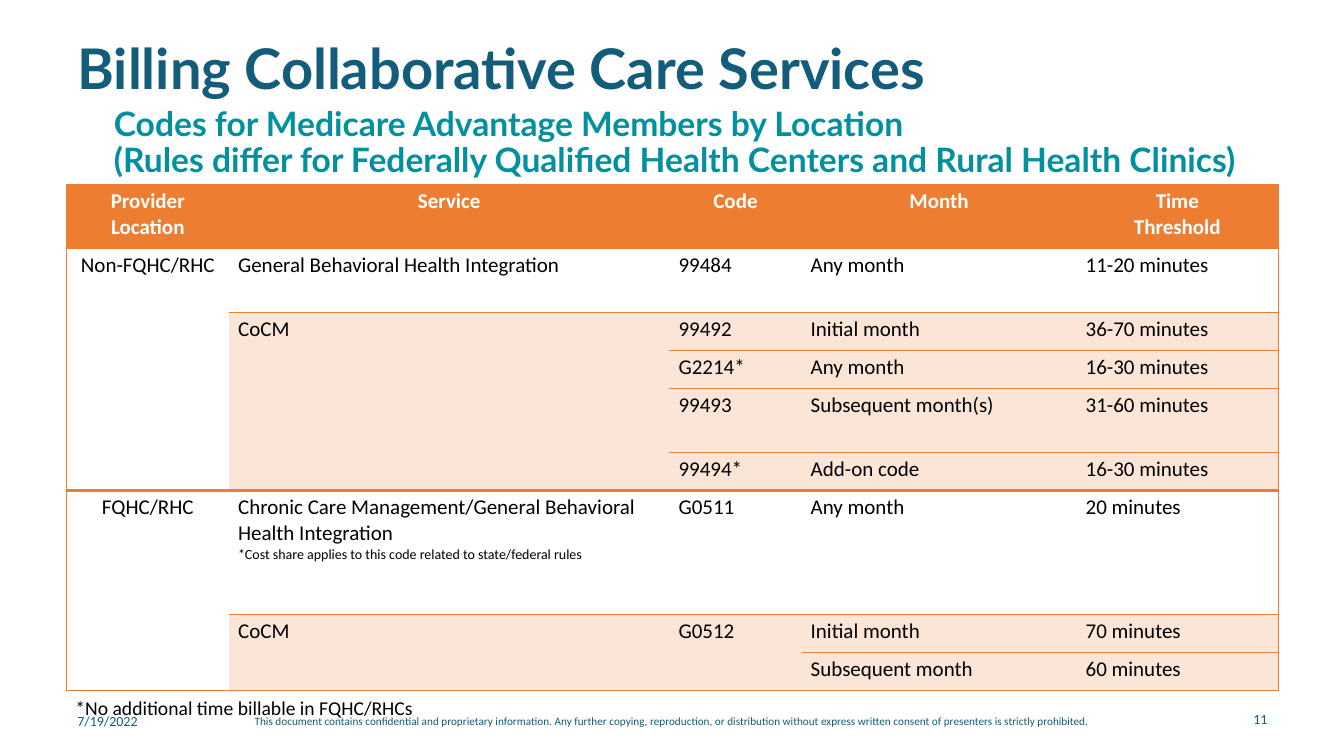
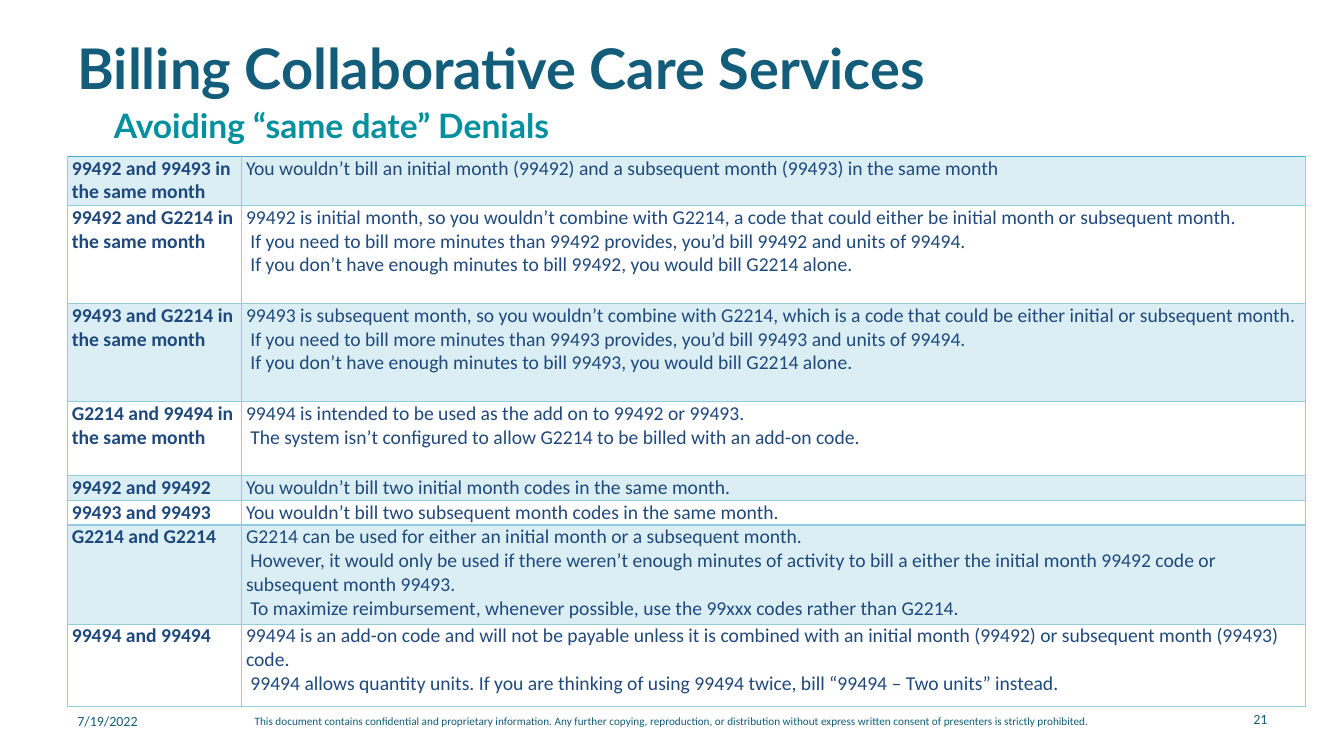
"""Build two slides on billing collaborative care services."""
from lxml.etree import SubElement
from pptx import Presentation
from pptx.dml.color import RGBColor
from pptx.enum.text import MSO_ANCHOR, MSO_AUTO_SIZE, PP_ALIGN
from pptx.oxml.ns import qn
from pptx.util import Cm, Pt

NAVY = RGBColor(0x13, 0x5D, 0x7A)
TEAL = RGBColor(0x00, 0x90, 0x9E)
ORANGE = RGBColor(0xED, 0x7D, 0x31)
PEACH = RGBColor(0xFB, 0xE5, 0xD6)
INK_BLUE = RGBColor(0x1F, 0x49, 0x7D)
SKY = RGBColor(0x92, 0xCD, 0xDC)
DEEP_SKY = RGBColor(0x4B, 0xAC, 0xC6)
PALE_SKY = RGBColor(0xDA, 0xEE, 0xF3)
BLACK = RGBColor(0, 0, 0)
WHITE = RGBColor(255, 255, 255)

TITLE = "Billing Collaborative Care Services"
DATE = "7/19/2022"
NOTICE = (
    "This document contains confidential and proprietary information. Any further copying, "
    "reproduction, or distribution without express written consent of presenters is strictly prohibited."
)


def write(frame, text, size=10, color=NAVY, font="Calibri", bold=False,
          align=PP_ALIGN.LEFT, anchor=MSO_ANCHOR.TOP, spacing=None, indent=0):
    """Fill a text frame with one paragraph per line of text."""
    frame.word_wrap = True
    frame.vertical_anchor = anchor
    lines = [text] if isinstance(text, str) else text
    for number, line in enumerate(lines):
        para = frame.add_paragraph() if number else frame.paragraphs[0]
        para.alignment = align
        para.line_spacing = spacing
        if number and indent:
            para._p.get_or_add_pPr().set("indent", str(indent))
        span = para.add_run()
        span.text = line
        span.font.name = font
        span.font.size = Pt(size)
        span.font.bold = bold
        span.font.color.rgb = color


def format_cell(cell, fill, edges, margin_x, margin_y):
    """Set borders, given as side to (colour, points), then fill and margins."""
    properties = cell._tc.get_or_add_tcPr()
    for side in "LRTB":
        line = SubElement(properties, qn(f"a:ln{side}"))
        if side in edges:
            color, width = edges[side]
            line.set("w", str(Pt(width)))
            SubElement(SubElement(line, qn("a:solidFill")), qn("a:srgbClr")).set("val", str(color))
        else:
            SubElement(line, qn("a:noFill"))
    cell.fill.solid()
    cell.fill.fore_color.rgb = fill
    cell.margin_left = cell.margin_right = margin_x
    cell.margin_top = cell.margin_bottom = margin_y


CODE_ROWS = [
    [["Provider", "Location"], "Service", "Code", "Month", ["Time", "Threshold"]],
    ["Non-FQHC/RHC", "General Behavioral Health Integration", "99484", "Any month", "11-20 minutes"],
    ["", "CoCM", "99492", "Initial month", "36-70 minutes"],
    ["", "", "G2214*", "Any month", "16-30 minutes"],
    ["", "", "99493", "Subsequent month(s)", "31-60 minutes"],
    ["", "", "99494*", "Add-on code", "16-30 minutes"],
    ["FQHC/RHC",
     ["Chronic Care Management/General Behavioral Health Integration",
      "*Cost share applies to this code related to state/federal rules"],
     "G0511", "Any month", "20 minutes"],
    ["", "CoCM", "G0512", "Initial month", "70 minutes"],
    ["", "", "", "Subsequent month", "60 minutes"],
]
CODE_MERGES = [(1, 0, 5), (2, 1, 5), (6, 0, 8), (7, 1, 8), (7, 2, 8)]
CODE_WIDTHS = [4.09, 11.1, 3.33, 6.93, 5.08]
CODE_HEIGHTS = [1.61, 1.61, 0.96, 0.96, 1.61, 0.96, 3.12, 0.96, 0.96]
WHITE_ROWS = (1, 6)
GROUP_END = 5

DENIAL_ROWS = [
    ("99492 and 99493 in the same month",
     ["You wouldn’t bill an initial month (99492) and a subsequent month (99493) in the same month"]),
    ("99492 and G2214 in the same month",
     ["99492 is initial month, so you wouldn’t combine with G2214, a code that could either be "
      "initial month or subsequent month.",
      "If you need to bill more minutes than 99492 provides, you’d bill 99492 and units of 99494.",
      "If you don’t have enough minutes to bill 99492, you would bill G2214 alone."]),
    ("99493 and G2214 in the same month",
     ["99493 is subsequent month, so you wouldn’t combine with G2214, which is a code that could be "
      "either initial or subsequent month.",
      "If you need to bill more minutes than 99493 provides, you’d bill 99493 and units of 99494.",
      "If you don’t have enough minutes to bill 99493, you would bill G2214 alone."]),
    ("G2214 and 99494 in the same month",
     ["99494 is intended to be used as the add on to 99492 or 99493.",
      "The system isn’t configured to allow G2214 to be billed with an add-on code."]),
    ("99492 and 99492", ["You wouldn’t bill two initial month codes in the same month."]),
    ("99493 and 99493", ["You wouldn’t bill two subsequent month codes in the same month."]),
    ("G2214 and G2214",
     ["G2214 can be used for either an initial month or a subsequent month.",
      "However, it would only be used if there weren’t enough minutes of activity to bill a either "
      "the initial month 99492 code or subsequent month 99493.",
      "To maximize reimbursement, whenever possible, use the 99xxx codes rather than G2214."]),
    ("99494 and 99494",
     ["99494 is an add-on code and will not be payable unless it is combined with an initial month "
      "(99492) or subsequent month (99493) code.",
      "99494 allows quantity units. If you are thinking of using 99494 twice, bill “99494 – Two "
      "units” instead."]),
]
DENIAL_WIDTHS = [4.39, 26.8]
DENIAL_HEIGHTS = [1.24, 2.47, 2.47, 1.87, 0.62, 0.62, 2.5, 2.07]

PAGES = [
    ("11", 2.36, ["Codes for Medicare Advantage Members by Location",
                  "(Rules differ for Federally Qualified Health Centers and Rural Health Clinics)"],
     1.68, 4.65, CODE_WIDTHS, CODE_HEIGHTS),
    ("21", 1.5, "Avoiding “same date” Denials", 1.7, 3.94, DENIAL_WIDTHS, DENIAL_HEIGHTS),
]

deck = Presentation()
deck.slide_width = Cm(33.87)
deck.slide_height = Cm(19.05)

tables = []
for number, subtitle_top, subtitle, left, top, widths, heights in PAGES:
    page = deck.slides.add_slide(deck.slide_layouts[5])
    title = page.shapes.title
    title.left, title.top, title.width, title.height = Cm(1.7), Cm(1.02), Cm(29.85), Cm(1.57)
    title.text_frame.auto_size = MSO_AUTO_SIZE.NONE
    write(title.text_frame, TITLE, size=40, font="Lato", bold=True,
          anchor=MSO_ANCHOR.MIDDLE, spacing=0.9)

    box = page.shapes.add_textbox(Cm(2.62), Cm(subtitle_top), Cm(29.62), Cm(2.29))
    write(box.text_frame, subtitle, size=24, color=TEAL, font="Lato", bold=True,
          anchor=MSO_ANCHOR.BOTTOM, spacing=0.9)

    for text, box_left, box_top, width, size, align in [
        (DATE, 1.7, 17.83, 2.57, 10, PP_ALIGN.LEFT),
        (NOTICE, 4.27, 17.88, 25.35, 8, PP_ALIGN.CENTER),
        (number, 29.62, 17.78, 2.57, 10, PP_ALIGN.RIGHT),
    ]:
        box = page.shapes.add_textbox(Cm(box_left), Cm(box_top), Cm(width), Cm(1.02))
        write(box.text_frame, text, size=size, align=align)

    table = page.shapes.add_table(len(heights), len(widths), Cm(left), Cm(top),
                                  Cm(sum(widths)), Cm(sum(heights))).table
    table.first_row = table.horz_banding = False
    for column, width in zip(table.columns, widths):
        column.width = Cm(width)
    for row, height in zip(table.rows, heights):
        row.height = Cm(height)
    tables.append(table)

code_table, denial_table = tables

for first, column, last in CODE_MERGES:
    code_table.cell(first, column).merge(code_table.cell(last, column))

for row, texts in enumerate(CODE_ROWS):
    for column, text in enumerate(texts):
        cell = code_table.cell(row, column)
        last = row + cell.span_height - 1 if cell.is_merge_origin else row
        edges = {}
        if not cell.is_spanned:
            edges["T"] = (ORANGE, 2.25 if row == GROUP_END + 1 else 0.5)
        if not cell.is_spanned or (row, column) in [(end, place) for _, place, end in CODE_MERGES]:
            edges["B"] = (ORANGE, 2.25 if last == GROUP_END else 0.5)
        if column == 0:
            edges["L"] = (ORANGE, 0.5)
        if column == len(texts) - 1:
            edges["R"] = (ORANGE, 0.5)
        header = row == 0
        plain = column == 0 or row in WHITE_ROWS
        fill = ORANGE if header else WHITE if plain else PEACH
        format_cell(cell, fill, edges, Cm(0.23), Cm(0.11))
        if text:
            middle = header or cell.is_merge_origin or (row in WHITE_ROWS and column > 1)
            write(cell.text_frame, text, size=15, color=WHITE if header else BLACK, bold=header,
                  align=PP_ALIGN.CENTER if header or column == 0 else PP_ALIGN.LEFT,
                  anchor=MSO_ANCHOR.MIDDLE if middle else MSO_ANCHOR.TOP)

cost_share = code_table.cell(6, 1).text_frame.paragraphs[1]
cost_share.runs[0].font.size = Pt(10)

box = deck.slides[0].shapes.add_textbox(Cm(1.65), Cm(17.4), Cm(16.92), Cm(0.86))
write(box.text_frame, "*No additional time billable in FQHC/RHCs", size=14, color=BLACK)

for row, texts in enumerate(DENIAL_ROWS):
    edges = dict.fromkeys("LRTB", (SKY, 1))
    if row == 0:
        edges["T"] = (DEEP_SKY, 1)
    for column, text in enumerate(texts):
        cell = denial_table.cell(row, column)
        format_cell(cell, WHITE if row in (1, 3, 5, 7) else PALE_SKY, edges, Cm(0.11), Cm(0))
        write(cell.text_frame, text, size=14, color=INK_BLUE, bold=column == 0, indent=Cm(0.11))

deck.save("out.pptx")
